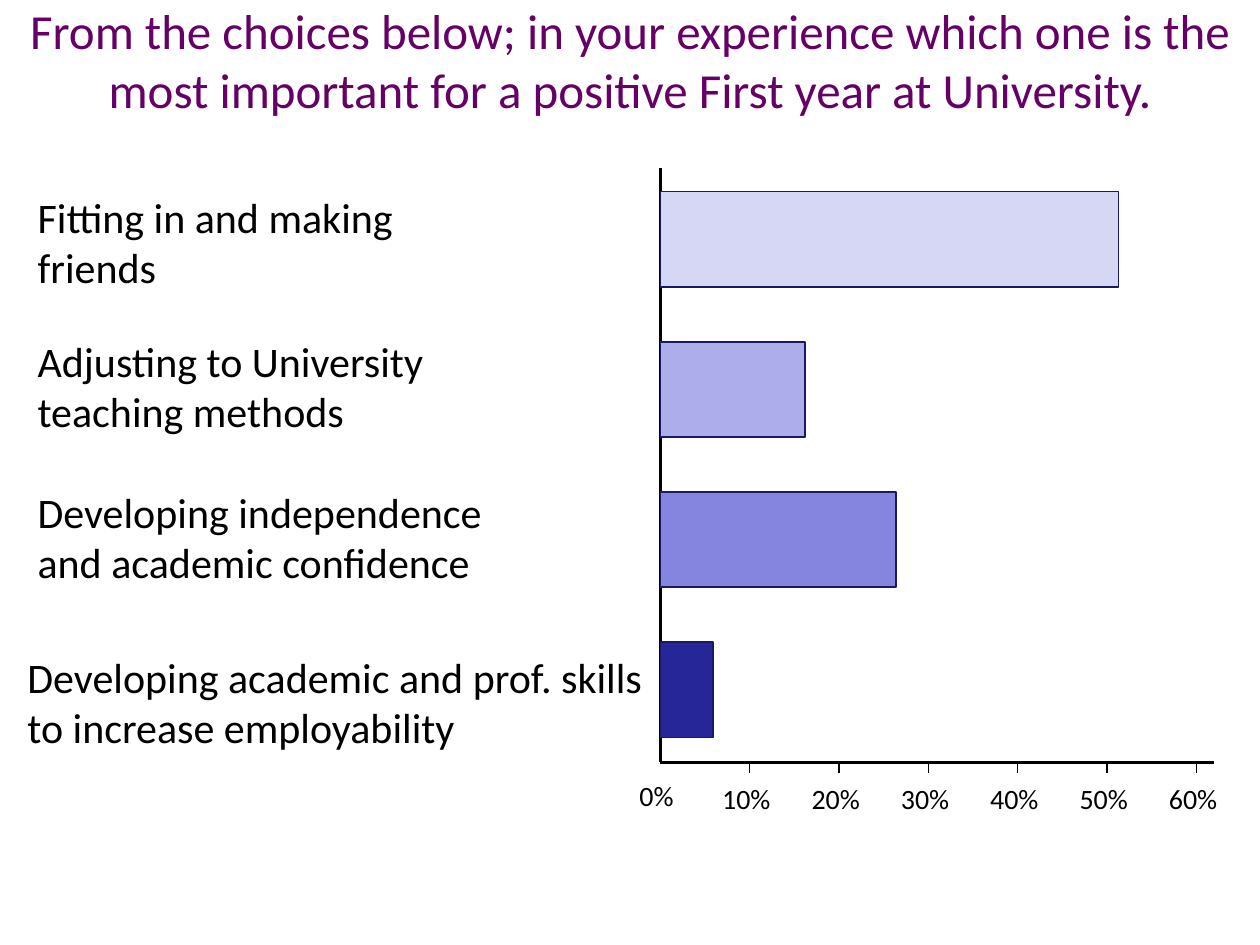
from dataclasses import dataclass

from lxml import etree
from pptx import Presentation
from pptx.dml.color import RGBColor
from pptx.enum.shapes import MSO_CONNECTOR, MSO_SHAPE
from pptx.enum.text import MSO_ANCHOR, PP_ALIGN
from pptx.oxml.ns import qn
from pptx.util import Pt

LEFT, CENTER = PP_ALIGN.LEFT, PP_ALIGN.CENTER
TOP, MIDDLE = MSO_ANCHOR.TOP, MSO_ANCHOR.MIDDLE
RECTANGLE = MSO_SHAPE.RECTANGLE
STRAIGHT = MSO_CONNECTOR.STRAIGHT


@dataclass(frozen=True)
class Theme:
    font: str = "Calibri"
    title_size: float = 28
    label_size: float = 24
    tick_size: float = 16
    title: str = "660066"
    text: str = "000000"
    axis: str = "000000"
    bar_line: str = "191966"
    bars: tuple = ("D6D6F5", "ADADEB", "8585E0", "262699")


class SlideBuilder:
    def __init__(self, slide, theme):
        self.s = slide
        self.theme = theme

    def text(self, text, x, y, w, h, size, color, align=LEFT, anchor=TOP):
        tf = self.s.shapes.add_textbox(Pt(x), Pt(y), Pt(w), Pt(h)).text_frame
        tf.word_wrap = True
        tf.vertical_anchor = anchor
        p = tf.paragraphs[0]
        p.text = text
        p.alignment = align
        p.font.name = self.theme.font
        p.font.size = Pt(size)
        p.font.color.rgb = RGBColor.from_string(color)

    def bar(self, x, y, w, h, fill):
        sp = self.s.shapes.add_shape(RECTANGLE, Pt(x), Pt(y), Pt(w), Pt(h))
        sp.shadow.inherit = False
        sp.fill.solid()
        sp.fill.fore_color.rgb = RGBColor.from_string(fill)
        sp.line.color.rgb = RGBColor.from_string(self.theme.bar_line)
        sp.line.width = Pt(0.75)

    def line(self, x1, y1, x2, y2, width):
        cn = self.s.shapes.add_connector(STRAIGHT, Pt(x1), Pt(y1), Pt(x2), Pt(y2))
        cn.line.color.rgb = RGBColor.from_string(self.theme.axis)
        cn.line.width = Pt(width)
        etree.SubElement(cn._element.spPr, qn("a:effectLst"))


# Answer, share in percent, and the label's left, top and width
ANSWERS = [
    ("Fitting in and making friends", 51.3, 14.4, 105.8, 278),
    ("Adjusting to University teaching methods", 16.2, 14.4, 188, 284),
    ("Developing independence and academic confidence", 26.4, 14.4, 274.3, 289.5),
    ("Developing academic and prof. skills to increase employability",
     5.9, 8.6, 368.6, 380),
]
AXIS_X, AXIS_Y = 377.3, 435.6
AXIS_TOP, AXIS_RIGHT = 95.8, 694
TICK_STEP = 51.05  # ten percent
BAR_TOP, BAR_STEP, BAR_HEIGHT = 109.6, 85.75, 54.4


def main():
    prs = Presentation()
    prs.slide_width, prs.slide_height = Pt(720), Pt(540)
    theme = Theme()
    b = SlideBuilder(prs.slides.add_slide(prs.slide_layouts[6]), theme)

    # Title
    b.text("From the choices below; in your experience which one is the most "
           "important for a positive First year at University.",
           0, 0, 720, 67.7, theme.title_size, theme.title, CENTER, MIDDLE)

    # Answer labels
    for label, _, x, y, w in ANSWERS:
        b.text(label, x, y, w, 65.5, theme.label_size, theme.text)

    # Axes
    b.line(AXIS_X, AXIS_TOP, AXIS_X, AXIS_Y, 1.5)
    b.line(AXIS_X, AXIS_Y, AXIS_RIGHT, AXIS_Y, 1.5)

    # Bars
    for i, (answer, fill) in enumerate(zip(ANSWERS, theme.bars)):
        b.bar(AXIS_X, BAR_TOP + i * BAR_STEP,
              answer[1] / 10 * TICK_STEP, BAR_HEIGHT, fill)

    # Ticks and percentages
    for i in range(7):
        x = AXIS_X + i * TICK_STEP
        if i:
            b.line(x, AXIS_Y, x, AXIS_Y + 6, 0.75)
        w, y = (45.4, 443.3) if i else (38, 441.4)
        b.text(f"{i * 10}%", x - w / 2, y, w, 26.6, theme.tick_size, theme.text)

    prs.save("out.pptx")


if __name__ == "__main__":
    main()
